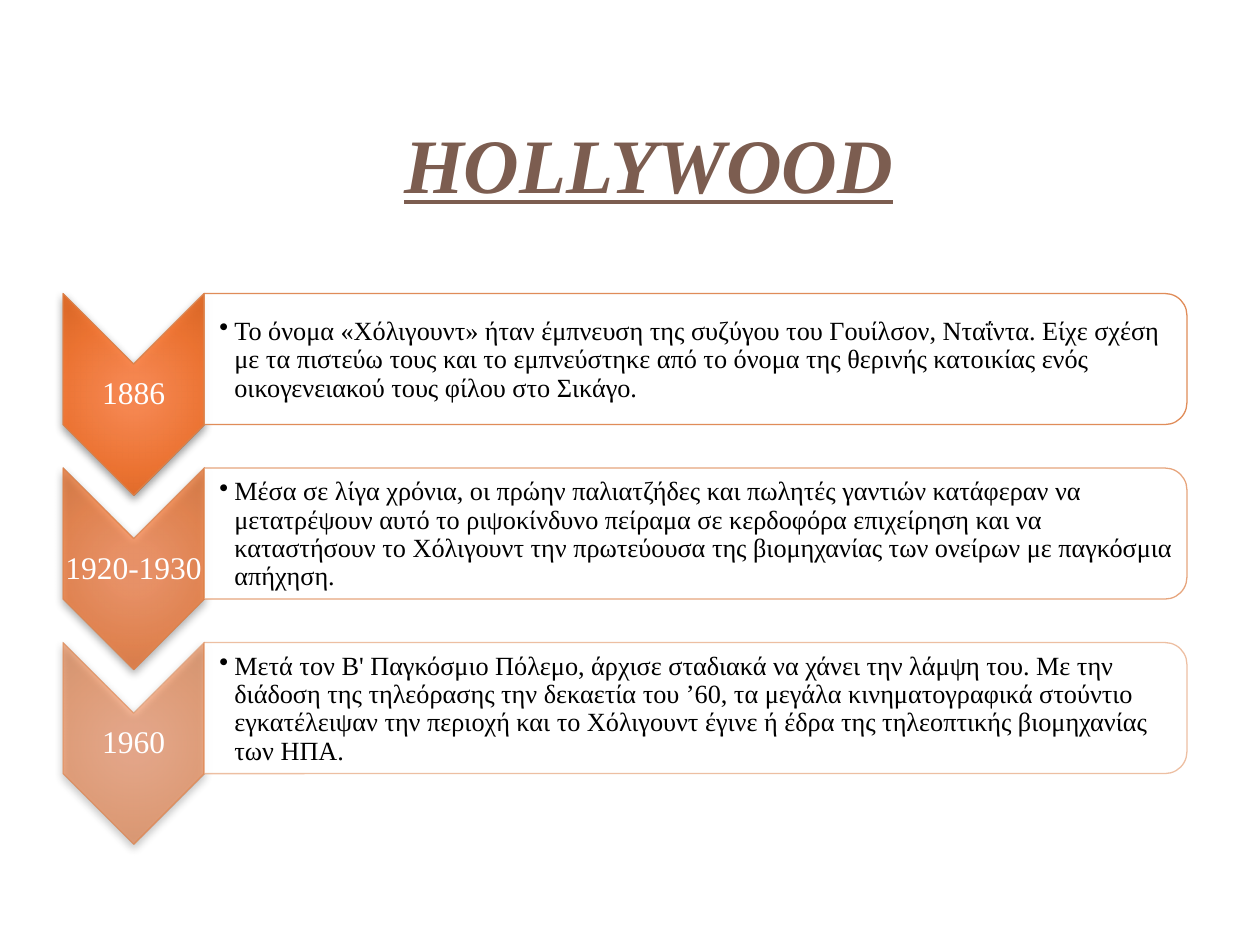
import pptx
import pptx.util
import pptx.dml.color
import pptx.enum.shapes
import pptx.enum.text
import pptx.oxml
import pptx.oxml.ns
from dataclasses import dataclass
from pptx.util import Inches


@dataclass(frozen=True)
class Theme:
    font: str = "Times New Roman"
    title: str = "7C5D50"
    accent: str = "DD8047"
    white: str = "FFFFFF"
    black: str = "000000"
    title_size: int = 44
    year_size: int = 18
    body_size: int = 15
    glow: tuple = ((0, "FF854A"), (15, "FF8448"), (62, "F46F27"),
                   (97, "DE611A"), (100, "DE5E0F"))


theme = Theme()
shapes_enum = pptx.enum.shapes.MSO_SHAPE
align = pptx.enum.text.PP_ALIGN
anchor = pptx.enum.text.MSO_ANCHOR
rgb = pptx.dml.color.RGBColor.from_string
qn = pptx.oxml.ns.qn
ns = pptx.oxml.ns.nsdecls("a")

deck = pptx.Presentation()
deck.slide_width, deck.slide_height = Inches(10), Inches(7.5)
page = deck.slides.add_slide(deck.slide_layouts[6])


def add_text(left, top, width, height, text, size, color, middle, margins):
    """Add a one-run text box; return its paragraph and span."""
    box = page.shapes.add_textbox(Inches(left), Inches(top), Inches(width), Inches(height))
    frame = box.text_frame
    frame.word_wrap = True
    frame.vertical_anchor = middle
    (frame.margin_left, frame.margin_top,
     frame.margin_right, frame.margin_bottom) = map(Inches, margins)
    para = frame.paragraphs[0]
    span = para.add_run()
    span.text = text
    span.font.name = theme.font
    span.font.size = pptx.util.Pt(size)
    span.font.color.rgb = rgb(color)
    return para, span


def add_turned(kind, left, top, width, height, fill_alpha, line_alpha):
    """Add a shape turned a quarter, with a see-through fill and outline."""
    shape = page.shapes.add_shape(kind, Inches(left), Inches(top), Inches(width), Inches(height))
    shape.rotation = 90
    shape.shadow.inherit = False
    shape.fill.solid()
    shape.fill.fore_color.rgb = rgb(theme.white)
    shape.line.color.rgb = rgb(theme.accent)
    shape.line.width = pptx.util.Pt(0.75)
    props = shape.element.spPr
    for part, alpha in (("a:solidFill", fill_alpha), ("a:ln", line_alpha)):
        color = next(props.find(qn(part)).iter(qn("a:srgbClr")))
        color.append(pptx.oxml.parse_xml(f'<a:alpha {ns} val="{alpha * 1000}"/>'))
    return props


# Title
para, span = add_text(0.5, 0.24, 9.3, 1.47, "HOLLYWOOD", theme.title_size, theme.title,
                      anchor.BOTTOM, (0.1, 0.05, 0.1, 0.05))
para.alignment = align.CENTER
para.line_spacing = pptx.util.Pt(20)
span.font.bold = span.font.italic = span.font.underline = True

# Timeline: year, text, opacity
periods = [
    ("1886", "Το όνομα «Χόλιγουντ» ήταν έμπνευση της συζύγου του Γουίλσον, Νταΐντα. "
     "Είχε σχέση με τα πιστεύω τους και το εμπνεύστηκε από το όνομα της θερινής "
     "κατοικίας ενός οικογενειακού τους φίλου στο Σικάγο.", 90),
    ("1920-1930", "Μέσα σε λίγα χρόνια, οι πρώην παλιατζήδες και πωλητές γαντιών "
     "κατάφεραν να μετατρέψουν αυτό το ριψοκίνδυνο πείραμα σε κερδοφόρα επιχείρηση "
     "και να καταστήσουν το Χόλιγουντ την πρωτεύουσα της βιομηχανίας των ονείρων "
     "με παγκόσμια απήχηση.", 70),
    ("1960", "Μετά τον Β' Παγκόσμιο Πόλεμο, άρχισε σταδιακά να χάνει την λάμψη του. "
     "Με την διάδοση της τηλεόρασης την δεκαετία του ’60, τα μεγάλα κινηματογραφικά "
     "στούντιο εγκατέλειψαν την περιοχή και το Χόλιγουντ έγινε ή έδρα της "
     "τηλεοπτικής βιομηχανίας των ΗΠΑ.", 50),
]
row_pitch = 2.77 / 2

for row, (year, story, opacity) in enumerate(periods):
    offset = row * row_pitch

    # Chevron with radial gradient and soft shadow
    props = add_turned(shapes_enum.CHEVRON, 0.26, 2.57 + offset, 1.6, 1.12, opacity, opacity)
    stops = "".join(
        f'<a:gs pos="{place * 1000}"><a:srgbClr val="{color}">'
        f'<a:alpha val="{opacity * 1000}"/></a:srgbClr></a:gs>'
        for place, color in theme.glow)
    gradient = pptx.oxml.parse_xml(
        f'<a:gradFill {ns} rotWithShape="1"><a:gsLst>{stops}</a:gsLst><a:path path="circle">'
        '<a:fillToRect l="50000" t="50000" r="50000" b="50000"/></a:path></a:gradFill>')
    props.replace(props.find(qn("a:solidFill")), gradient)
    props.find(qn("a:effectLst")).append(pptx.oxml.parse_xml(
        f'<a:outerShdw {ns} blurRad="{Inches(0.07)}" dist="{Inches(0.03)}" dir="5400000" '
        f'rotWithShape="0"><a:srgbClr val="{theme.black}"><a:alpha val="43000"/>'
        '</a:srgbClr></a:outerShdw>'))

    # Year
    para, span = add_text(0.5, 2.89 + offset, 1.12, 0.48, year, theme.year_size, theme.white,
                          anchor.MIDDLE, (0.01, 0.01, 0.01, 0.01))
    para.alignment = align.CENTER
    para.line_spacing = 0.9

    # Panel and its bulleted text
    add_turned(shapes_enum.ROUND_2_SAME_RECTANGLE, 5, -1.05 + offset, 1.04, 7.8, 90, opacity)
    para, span = add_text(1.62, 2.39 + offset, 7.75, 0.94, story, theme.body_size, theme.black,
                          anchor.MIDDLE, (0.12, 0.01, 0.01, 0.01))
    para.level = 1
    para.line_spacing = 0.9
    para_props = para._p.get_or_add_pPr()
    para_props.set("marL", str(Inches(0.12)))
    para_props.set("indent", str(Inches(-0.12)))
    para_props.append(pptx.oxml.parse_xml(f'<a:buChar {ns} char="•"/>'))

deck.save("out.pptx")
